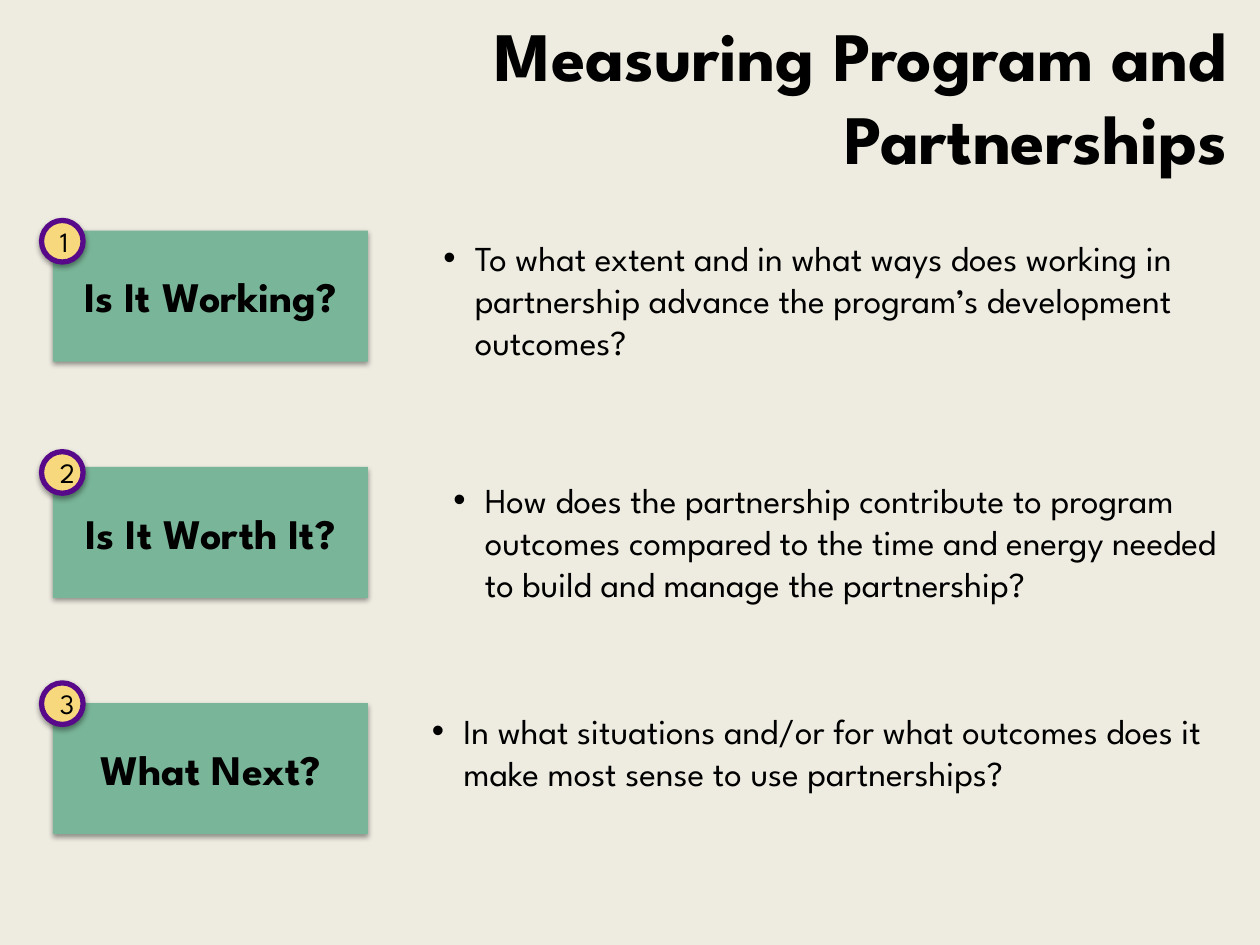
from lxml import etree
from pptx import Presentation, util as u
from pptx.dml.color import RGBColor
from pptx.enum import shapes, text
from pptx.oxml.ns import qn

FONT = "League Spartan"
COLORS = {"background": "EEECE1", "text": "000000", "box": "79B598",
          "badge": "F8D87C", "ring": "580989", "shadow": "000000"}
TITLE = "Measuring Program and Partnerships"
QUESTIONS = [
    ("Is It Working?",
     "To what extent and in what ways does working in partnership advance "
     "the program’s development outcomes?", (3.42, 1.83, 6.42, 1.08)),
    ("Is It Worth It?",
     "How does the partnership contribute to program outcomes compared to "
     "the time and energy needed to build and manage the partnership?",
     (3.5, 3.75, 6.33, 1.42)),
    ("What Next?",
     "In what situations and/or for what outcomes does it make most sense "
     "to use partnerships?", (3.33, 5.58, 6.5, 1.08)),
]
BOX_TOP, BOX_STEP = 1.83, 1.875
BADGE_TOP, BADGE_STEP = 1.75, 1.835


def color(name):
    return RGBColor.from_string(COLORS[name])


def write(sp, content, size, bold=False, align=text.PP_ALIGN.LEFT,
          anchor=text.MSO_ANCHOR.MIDDLE):
    tf = sp.text_frame
    tf.word_wrap = True
    tf.vertical_anchor = anchor
    tf.text = content
    p = tf.paragraphs[0]
    p.alignment = align
    font = p.runs[0].font
    font.name, font.size, font.bold = FONT, u.Pt(size), bold
    font.color.rgb = color("text")
    return p


def add_textbox(s, at):
    return s.shapes.add_textbox(*map(u.Inches, at))


def add_shadow(sp):
    effects = etree.SubElement(sp._element.spPr, qn("a:effectLst"))
    shadow = etree.SubElement(
        effects, qn("a:outerShdw"), blurRad=str(u.Pt(3.1)),
        dist=str(u.Pt(1.6)), dir="5400000", rotWithShape="0")
    tint = etree.SubElement(shadow, qn("a:srgbClr"), val=COLORS["shadow"])
    etree.SubElement(tint, qn("a:alpha"), val="38000")


def add_label(s, kind, at, fill, content, size, bold=False, ring=None):
    sp = s.shapes.add_shape(kind, *map(u.Inches, at))
    sp.fill.solid()
    sp.fill.fore_color.rgb = color(fill)
    if ring:
        sp.line.color.rgb = color(ring)
        sp.line.width = u.Pt(3)
    else:
        sp.line.fill.background()
    add_shadow(sp)
    write(sp, content, size, bold, text.PP_ALIGN.CENTER)


def add_bullet(s, at, content):
    p = write(add_textbox(s, at), content, 20, anchor=text.MSO_ANCHOR.TOP)
    pPr = p._p.get_or_add_pPr()
    pPr.set("marL", str(u.Inches(0.25)))
    pPr.set("indent", str(u.Inches(-0.25)))
    etree.SubElement(pPr, qn("a:buFont"), typeface="Arial")
    etree.SubElement(pPr, qn("a:buChar"), char="•")


def main():
    prs = Presentation()
    prs.slide_width, prs.slide_height = u.Inches(10), u.Inches(7.5)
    s = prs.slides.add_slide(prs.slide_layouts[6])
    s.background.fill.solid()
    s.background.fill.fore_color.rgb = color("background")

    write(add_textbox(s, (0.67, 0.17, 9.17, 1.17)), TITLE, 39.6, True,
          text.PP_ALIGN.RIGHT)
    for i, (label, question, at) in enumerate(QUESTIONS):
        add_label(s, shapes.MSO_SHAPE.RECTANGLE,
                  (0.42, BOX_TOP + i * BOX_STEP, 2.5, 1.04),
                  "box", label, 24, bold=True)
        add_label(s, shapes.MSO_SHAPE.OVAL,
                  (0.33, BADGE_TOP + i * BADGE_STEP, 0.33, 0.33),
                  "badge", str(i + 1), 16, ring="ring")
        add_bullet(s, at, question)
    prs.save("out.pptx")


if __name__ == "__main__":
    main()
